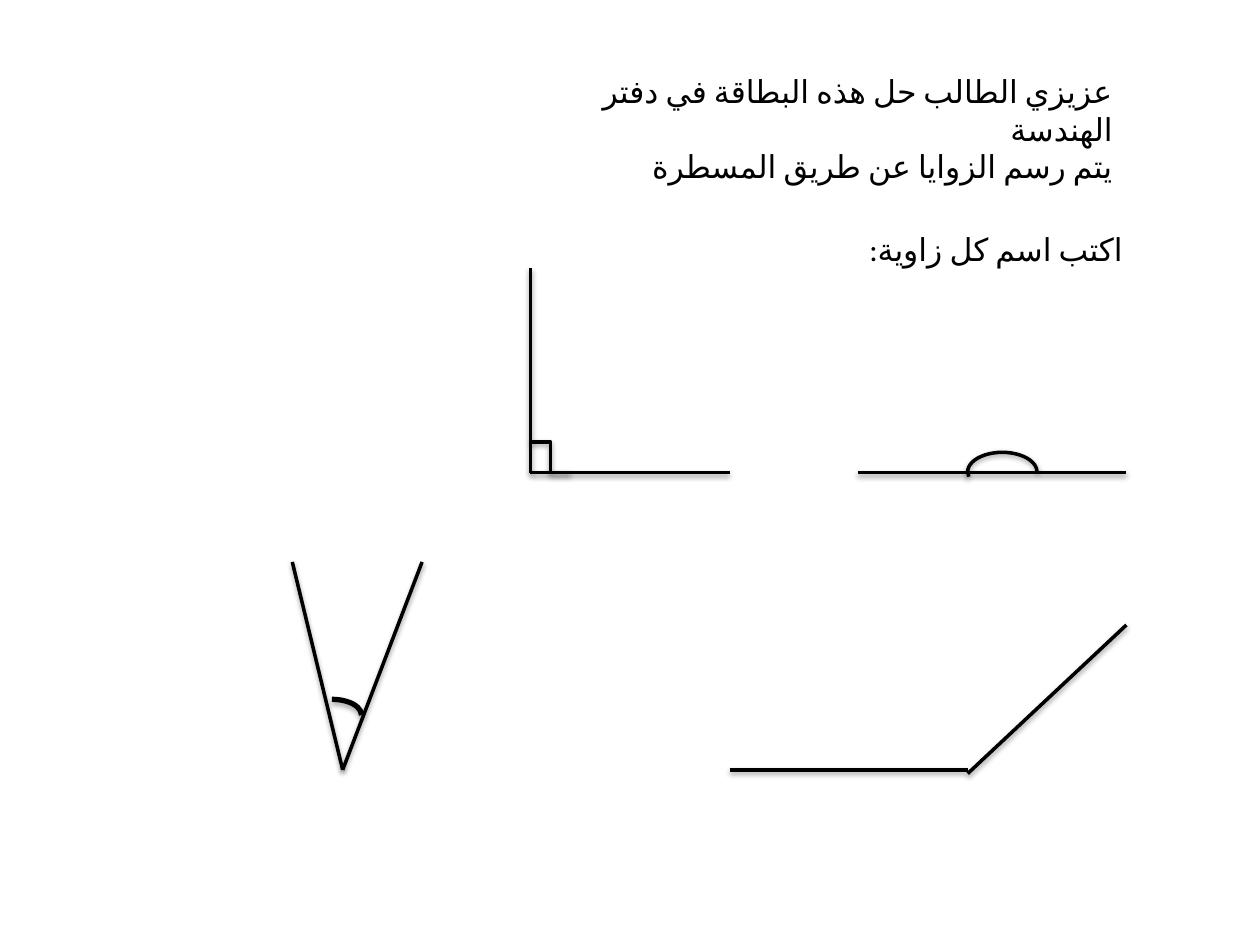
from lxml.etree import SubElement
from pptx import Presentation
from pptx.dml.color import RGBColor
from pptx.enum.lang import MSO_LANGUAGE_ID
from pptx.enum.shapes import MSO_CONNECTOR, MSO_SHAPE
from pptx.enum.text import MSO_AUTO_SIZE, PP_ALIGN
from pptx.oxml.ns import qn
from pptx.util import Inches, Pt

COLORS = {"ink": "000000"}
INK = RGBColor.from_string(COLORS["ink"])
FONT = "Calibri"


def add_shadow(part, distance, opacity):
    effects = SubElement(part.element.spPr, qn("a:effectLst"))
    shadow = SubElement(effects, qn("a:outerShdw"), blurRad=str(Pt(3.1)),
                        dist=str(Pt(distance)), dir="5400000", rotWithShape="0")
    tint = SubElement(shadow, qn("a:srgbClr"), val=COLORS["ink"])
    SubElement(tint, qn("a:alpha"), val=str(opacity * 1000))


def draw_outline(part, weight, distance=1.6, opacity=38):
    part.line.color.rgb = INK
    part.line.width = Pt(weight)
    add_shadow(part, distance, opacity)


def add_ray(slide, start, end, kind=MSO_CONNECTOR.STRAIGHT):
    ray = slide.shapes.add_connector(kind, *map(Inches, (*start, *end)))
    draw_outline(ray, 2)


def add_arc(slide, box, weight, start=None, **shadow):
    arc = slide.shapes.add_shape(MSO_SHAPE.ARC, *map(Inches, box))
    if start is not None:
        arc.adjustments[0] = start
    arc.fill.background()
    draw_outline(arc, weight, **shadow)


def set_arabic(run):
    run.font.language_id = MSO_LANGUAGE_ID.ARABIC
    SubElement(run._r.get_or_add_rPr(), qn("a:cs"), typeface=FONT)


def add_instructions(slide, box, lines):
    frame = slide.shapes.add_textbox(*map(Inches, box)).text_frame
    frame.word_wrap = True
    frame.auto_size = MSO_AUTO_SIZE.SHAPE_TO_FIT_TEXT
    frame.text = "\n".join(lines)
    for paragraph in frame.paragraphs:
        paragraph.alignment = PP_ALIGN.RIGHT
        paragraph._p.get_or_add_pPr().set("rtl", "1")
        paragraph.font.size = Pt(18)
        paragraph.font.name = FONT
        paragraph.font.color.rgb = INK
        for run in paragraph.runs:
            set_arabic(run)


def add_straight_angle(slide):
    add_ray(slide, (8.94, 3.75), (6.81, 3.75))
    add_arc(slide, (7.68, 3.59, 0.55, 0.31), 2, start=103.05)


def add_right_angle(slide):
    vertex = (4.21, 3.75)
    add_ray(slide, (4.21, 2.13), vertex)
    add_ray(slide, vertex, (5.79, 3.75))
    add_ray(slide, (4.21, 3.51), (4.53, 3.75), MSO_CONNECTOR.ELBOW)


def add_obtuse_angle(slide):
    add_ray(slide, (5.79, 6.11), (7.68, 6.11))
    add_ray(slide, (7.68, 6.14), (8.94, 4.96))


def add_acute_angle(slide):
    vertex = (2.72, 6.11)
    add_ray(slide, (3.35, 4.46), vertex)
    add_ray(slide, vertex, (2.32, 4.46))
    add_arc(slide, (2.4, 5.55, 0.47, 0.25), 3, distance=1.8, opacity=35)


def main():
    deck = Presentation()
    deck.slide_width, deck.slide_height = Inches(10), Inches(7.5)
    slide = deck.slides.add_slide(deck.slide_layouts[6])
    add_instructions(slide, (4.21, 0.52, 4.72, 0.71), [
        "عزيزي الطالب حل هذه البطاقة في دفتر الهندسة",
        "يتم رسم الزوايا عن طريق المسطرة ",
    ])
    add_instructions(slide, (6.02, 1.78, 2.99, 0.71), ["اكتب اسم كل زاوية:"])
    add_straight_angle(slide)
    add_right_angle(slide)
    add_obtuse_angle(slide)
    add_acute_angle(slide)
    deck.save("out.pptx")


if __name__ == "__main__":
    main()
